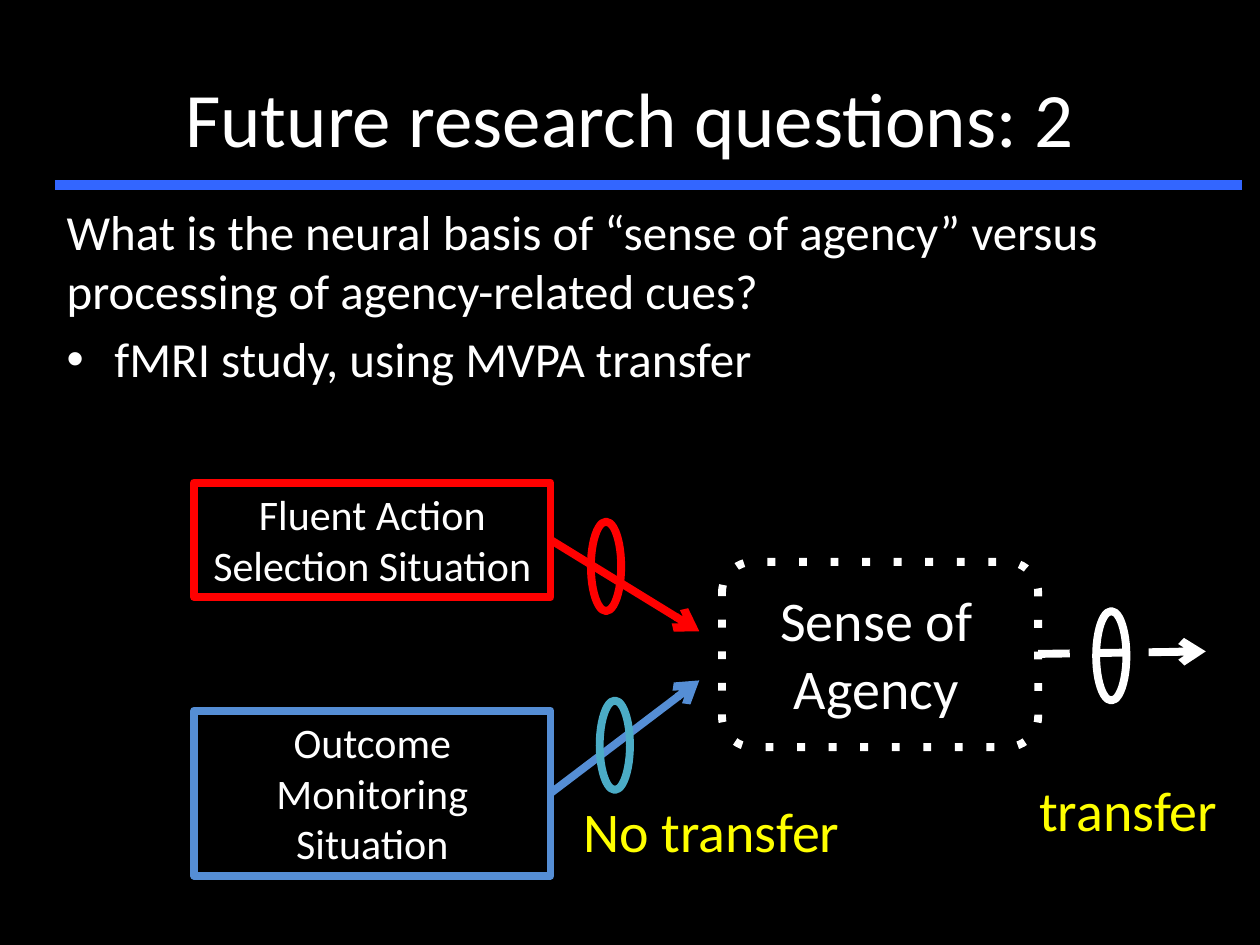
import pptx
import pptx.util
import pptx.dml.color
import pptx.enum.dml
import pptx.enum.shapes
import pptx.enum.text
import pptx.oxml
import pptx.oxml.ns
from dataclasses import dataclass
from lxml import etree

Inches = pptx.util.Inches
Pt = pptx.util.Pt
Align = pptx.enum.text.PP_ALIGN
Anchor = pptx.enum.text.MSO_ANCHOR
Shape = pptx.enum.shapes.MSO_SHAPE
qn = pptx.oxml.ns.qn


@dataclass(frozen=True)
class Theme:
    font: str = "Calibri"
    background: str = "000000"
    ink: str = "FFFFFF"
    rule: str = "3366FF"
    action: str = "FF0000"
    outcome: str = "558ED5"
    outcome_ring: str = "4BACC6"
    verdict: str = "FFFF00"
    title_size: int = 44
    concept_size: int = 32
    body_size: int = 28
    box_size: int = 24
    outline: float = 4.5
    rule_width: float = 6


def rgb(value):
    return pptx.dml.color.RGBColor.from_string(value)


def write(frame, *paragraphs, size, color, font, align=Align.LEFT,
          anchor=Anchor.TOP, wrap=True, before=0, after=0):
    frame.word_wrap = wrap
    frame.vertical_anchor = anchor
    for index, text in enumerate(paragraphs):
        paragraph = frame.add_paragraph() if index else frame.paragraphs[0]
        paragraph.alignment = align
        paragraph.space_before = Pt(before)
        paragraph.space_after = Pt(after)
        run = paragraph.add_run()
        run.text = text
        run.font.size = Pt(size)
        run.font.name = font
        run.font.color.rgb = rgb(color)
    return frame


class SlideBuilder:
    """Draws themed elements on the current slide."""

    def __init__(self, slide, theme):
        self.slide = slide
        self.theme = theme
        slide.background.fill.solid()
        slide.background.fill.fore_color.rgb = rgb(theme.background)

    def title(self, text, at):
        heading = self.slide.shapes.title
        heading.left, heading.top, heading.width, heading.height = map(Inches, at)
        write(heading.text_frame, text, size=self.theme.title_size, color=self.theme.ink,
              font=self.theme.font, align=Align.CENTER, anchor=Anchor.MIDDLE)

    def text(self, *paragraphs, at, size, color, **layout):
        box = self.slide.shapes.add_textbox(*map(Inches, at))
        return write(box.text_frame, *paragraphs, size=size, color=color,
                     font=self.theme.font, **layout)

    def bullet(self, paragraph, indent):
        properties = paragraph._p.get_or_add_pPr()
        properties.set("marL", str(Inches(indent)))
        properties.set("indent", str(-Inches(indent)))
        etree.SubElement(properties, qn("a:buFont"), typeface="Arial")
        etree.SubElement(properties, qn("a:buChar"), char="•")

    def stroke(self, line, color, width, dash=None):
        line.color.rgb = rgb(color)
        line.width = Pt(width)
        if dash:
            line.dash_style = pptx.enum.dml.MSO_LINE.DASH
            line._ln.find(qn("a:prstDash")).set("val", dash)

    def outline(self, preset, at, color, label=None, dash=None):
        figure = self.slide.shapes.add_shape(preset, *map(Inches, at))
        figure.shadow.inherit = False
        figure.fill.background()
        self.stroke(figure.line, color, self.theme.outline, dash)
        if label:
            write(figure.text_frame, label, size=self.theme.box_size, color=self.theme.ink,
                  font=self.theme.font, align=Align.CENTER, anchor=Anchor.TOP)

    def line(self, start, end, color, width, dash=None, arrow=True):
        connector = self.slide.shapes.add_connector(
            pptx.enum.shapes.MSO_CONNECTOR.STRAIGHT, *map(Inches, start + end))
        self.stroke(connector.line, color, width, dash)
        if arrow:
            etree.SubElement(connector.line._ln, qn("a:tailEnd"), type="arrow")
        etree.SubElement(connector._element.spPr, qn("a:effectLst"))


def main():
    theme = Theme()
    deck = pptx.Presentation()
    deck.slide_width, deck.slide_height = Inches(10), Inches(7.5)
    page = SlideBuilder(deck.slides.add_slide(deck.slide_layouts[5]), theme)

    page.title("Future research questions: 2", (0.5, 0.3, 9, 1.25))
    question = page.text(
        "What is the neural basis of “sense of agency” versus processing of agency-related cues?",
        "fMRI study, using MVPA transfer",
        at=(0.43, 1.55, 9.29, 5.67), size=theme.body_size, color=theme.ink,
        before=theme.body_size * 0.2)
    page.bullet(question.paragraphs[1], 0.38)

    situations = (
        ("Fluent Action Selection Situation", 3.83, 0.91, theme.action, 5.01),
        ("Outcome Monitoring Situation", 5.64, 1.31, theme.outcome, 5.4),
    )
    left, width = 1.54, 2.83
    for label, top, height, color, target in situations:
        page.outline(Shape.RECTANGLE, (left, top, width, height), color, label)
        page.line((left + width, top + height / 2), (5.55, target), color, theme.outline)

    page.text("Sense of Agency", at=(5.6, 4.6, 2.71, 1.18), size=theme.concept_size,
              color=theme.ink, align=Align.CENTER, after=5)
    page.outline(Shape.ROUNDED_RECTANGLE, (5.73, 4.46, 2.51, 1.47), theme.ink, dash="dot")
    page.line((0.44, 1.47), (9.86, 1.47), theme.rule, theme.rule_width, arrow=False)
    page.line((8.24, 5.19), (9.57, 5.17), theme.ink, theme.outline, dash="dash")

    rings = ((4.69, 4.14, theme.action), (4.76, 5.56, theme.outcome_ring), (8.7, 4.85, theme.ink))
    for ring_left, ring_top, color in rings:
        page.outline(Shape.OVAL, (ring_left, ring_top, 0.24, 0.71), color)

    verdicts = (("transfer", 8.15, 6.11, 1.63), ("No transfer", 4.53, 6.27, 2.25))
    for verdict, verdict_left, verdict_top, verdict_width in verdicts:
        page.text(verdict, at=(verdict_left, verdict_top, verdict_width, 0.64),
                  size=theme.concept_size, color=theme.verdict, wrap=False)

    deck.save("out.pptx")


if __name__ == "__main__":
    main()
